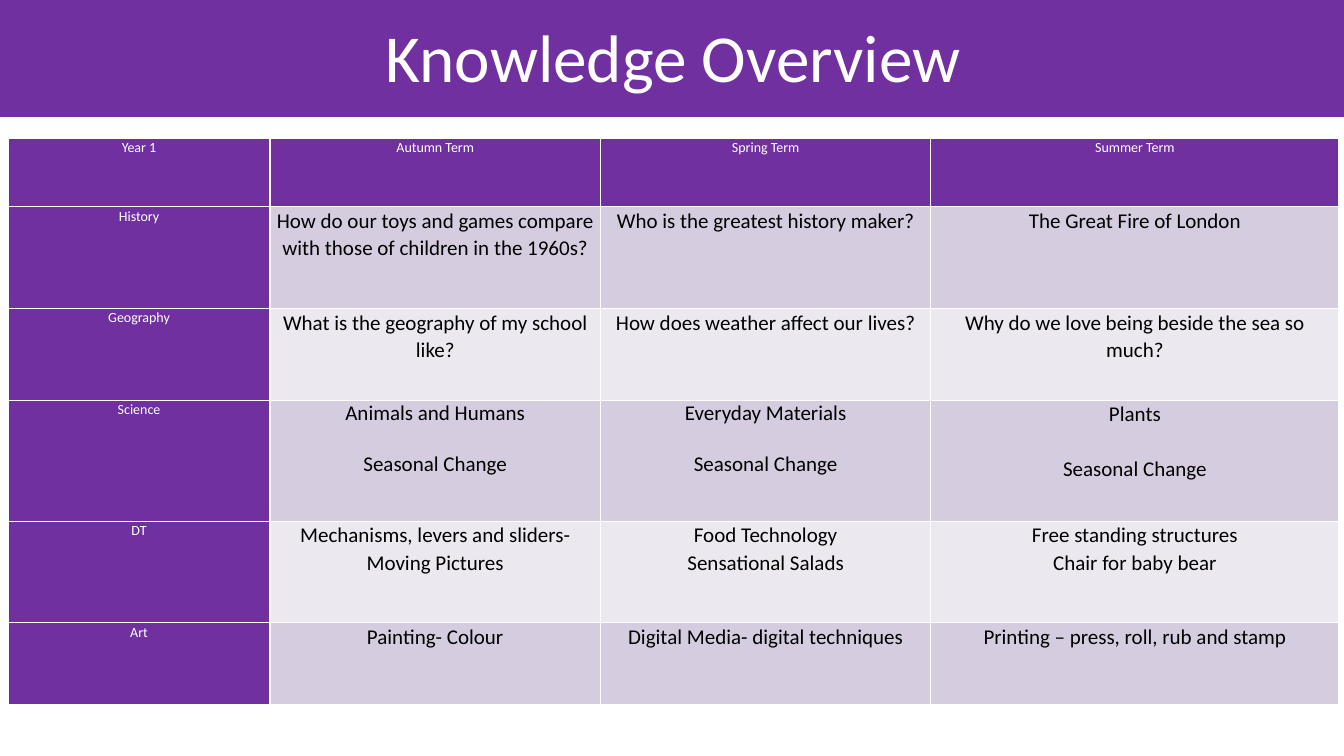
from dataclasses import dataclass

from lxml import etree
from pptx import Presentation
from pptx.dml.color import RGBColor
from pptx.enum.shapes import MSO_SHAPE
from pptx.enum.text import MSO_ANCHOR, PP_ALIGN
from pptx.oxml.ns import qn
from pptx.util import Inches, Pt

RECT = MSO_SHAPE.RECTANGLE
MIDDLE = MSO_ANCHOR.MIDDLE
CENTER = PP_ALIGN.CENTER
TITLE_ONLY = 5


@dataclass(frozen=True)
class Theme:
    font: str = "Calibri"
    purple: str = "7030A0"
    white: str = "FFFFFF"
    black: str = "000000"
    bands: tuple = ("EBE8F0", "D5CDDF")
    title: int = 48
    label: int = 10
    body: int = 15
    border: int = 1
    leading: float = 1.07


THEME = Theme()
WIDTH, HEIGHT = Inches(13.33), Inches(7.5)
BAND = (0, 0, WIDTH, Inches(1.16))
GRID = (Inches(0.08), Inches(1.37), Inches(13.2), Inches(5.62))
COLS = (2.6, 3.28, 3.28, 4.05)
ROWS = (0.68, 1.01, 0.91, 1.2, 1.01, 0.81)
SCIENCE = 3

# In a cell, \v breaks a line and \n starts a paragraph after a gap.
TERMS = (
    ("Year 1", "Autumn Term", "Spring Term", "Summer Term"),
    ("History",
     "How do our toys and games compare with those of children in the 1960s?",
     "Who is the greatest history maker?",
     "The Great Fire of London"),
    ("Geography",
     "What is the geography of my school like?",
     "How does weather affect our lives?",
     "Why do we love being beside the sea so much?"),
    ("Science",
     "Animals and Humans\nSeasonal Change",
     "Everyday Materials\nSeasonal Change",
     "Plants\nSeasonal Change"),
    ("DT",
     "Mechanisms, levers and sliders- Moving Pictures",
     "Food Technology\vSensational Salads",
     "Free standing structures\vChair for baby bear"),
    ("Art",
     "Painting- Colour",
     "Digital Media- digital techniques",
     "Printing – press, roll, rub and stamp"),
)


def color(code):
    return RGBColor.from_string(code)


def style(para, size, ink, leading):
    para.alignment = CENTER
    para.line_spacing = leading
    para.font.name = THEME.font
    para.font.size = Pt(size)
    para.font.color.rgb = color(ink)


def add_title(slide, box, text):
    left, top, width, height = box
    band = slide.shapes.add_shape(RECT, *box)
    band.shadow.inherit = False
    band.fill.solid()
    band.fill.fore_color.rgb = color(THEME.purple)
    band.line.fill.background()

    title = slide.shapes.title
    band._element.addnext(title._element)
    title.left, title.width = left + int(width * 0.026), int(width * 0.95)
    title.top, title.height = top + int(height * 0.18), int(height * 0.68)
    title.text = text
    title.text_frame.vertical_anchor = MIDDLE
    para = title.text_frame.paragraphs[0]
    style(para, THEME.title, THEME.white, 0.9)
    para.space_before = Pt(10)


def add_edges(cell):
    props = cell._tc.get_or_add_tcPr()
    for side in ("lnL", "lnR", "lnT", "lnB"):
        line = etree.SubElement(props, qn(f"a:{side}"), w=str(Pt(THEME.border)))
        fill = etree.SubElement(line, qn("a:solidFill"))
        etree.SubElement(fill, qn("a:srgbClr"), val=THEME.white)


def fill_cell(cell, text, back, size, ink, leading):
    add_edges(cell)
    cell.fill.solid()
    cell.fill.fore_color.rgb = color(back)
    cell.margin_left = cell.margin_right = Inches(0.06)
    cell.margin_top = cell.margin_bottom = 0
    cell.text = text
    for n, para in enumerate(cell.text_frame.paragraphs):
        style(para, size, ink, leading)
        if n:
            para.space_before = Pt(size * 1.22 * leading)


def add_grid(slide, box, data):
    """Place the table, sharing the box out by the column and row weights."""
    width, height = box[2:]
    table = slide.shapes.add_table(len(ROWS), len(COLS), *box).table
    for col, share in zip(table.columns, COLS):
        col.width = int(width * share / sum(COLS))
    for row, share in zip(table.rows, ROWS):
        row.height = int(height * share / sum(ROWS))
    for r, line in enumerate(data):
        for c, text in enumerate(line):
            if r == 0 or c == 0:
                look = THEME.purple, THEME.label, THEME.white
            else:
                look = THEME.bands[r % 2], THEME.body, THEME.black
            single = r == SCIENCE and c in (1, 2)
            leading = 1.0 if single else THEME.leading
            fill_cell(table.cell(r, c), text, *look, leading)


def main():
    deck = Presentation()
    deck.slide_width, deck.slide_height = WIDTH, HEIGHT
    slide = deck.slides.add_slide(deck.slide_layouts[TITLE_ONLY])
    add_title(slide, BAND, "Knowledge Overview")
    add_grid(slide, GRID, TERMS)
    deck.save("out.pptx")


if __name__ == "__main__":
    main()
